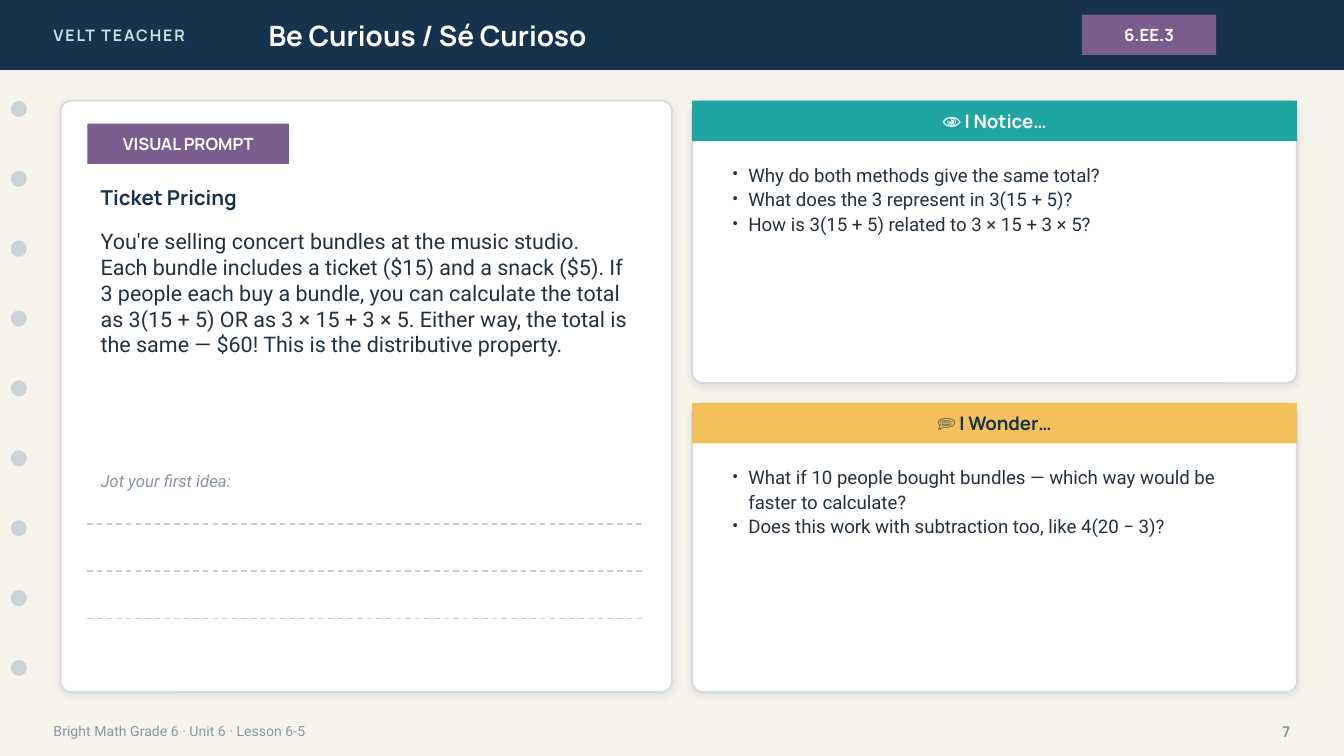
import pptx
import pptx.util
import pptx.dml.color
import pptx.enum.dml
import pptx.enum.shapes
import pptx.enum.text
import pptx.oxml
import pptx.oxml.ns
from lxml import etree

Inches, Pt = pptx.util.Inches, pptx.util.Pt
RGBColor = pptx.dml.color.RGBColor
MSO_SHAPE = pptx.enum.shapes.MSO_SHAPE
PP_ALIGN = pptx.enum.text.PP_ALIGN
MSO_ANCHOR = pptx.enum.text.MSO_ANCHOR
qn = pptx.oxml.ns.qn

CREAM = RGBColor(0xF7, 0xF4, 0xEC)
NAVY = RGBColor(0x17, 0x32, 0x4D)
MINT = RGBColor(0xBF, 0xE6, 0xE2)
WHITE = RGBColor(0xFF, 0xFF, 0xFF)
PURPLE = RGBColor(0x7A, 0x5C, 0x8E)
TEAL = RGBColor(0x1F, 0xA6, 0xA2)
AMBER = RGBColor(0xF2, 0xC1, 0x5B)
INK = RGBColor(0x24, 0x32, 0x3F)
GRAY = RGBColor(0x8A, 0x96, 0xA3)
HOLE = RGBColor(0xCB, 0xD3, 0xD9)
RULE = RGBColor(0xC7, 0xCD, 0xD2)
BORDER = RGBColor(0xD6, 0xDB, 0xDF)

SHADOW = (
    '<a:effectLst xmlns:a="http://schemas.openxmlformats.org/drawingml/2006/main">'
    '<a:outerShdw blurRad="50800" dist="12700" dir="5400000" algn="bl" rotWithShape="0">'
    '<a:srgbClr val="1C2E42"><a:alpha val="10000"/></a:srgbClr>'
    '</a:outerShdw></a:effectLst>'
)

# 16:9 slide
prs = pptx.Presentation()
prs.slide_width = Inches(10)
prs.slide_height = Inches(10 * 9 / 16)
s = prs.slides.add_slide(prs.slide_layouts[6])
s.background.fill.solid()
s.background.fill.fore_color.rgb = CREAM


def add_shape(x, y, w, h, fill, kind=MSO_SHAPE.RECTANGLE, radius=None):
    """Add a filled shape; a radius in inches makes it a shadowed card."""
    sp = s.shapes.add_shape(kind, Inches(x), Inches(y), Inches(w), Inches(h))
    sp.fill.solid()
    sp.fill.fore_color.rgb = fill
    if radius is None:
        sp.shadow.inherit = False
        sp.line.fill.background()
    else:
        sp.adjustments[0] = radius / min(w, h)
        sp.line.color.rgb = BORDER
        sp.line.width = Pt(1)
        sp._element.spPr.append(pptx.oxml.parse_xml(SHADOW))
    return sp


def add_text(text, box=None, sp=None, size=10, font="Manrope", color=INK, bold=False,
             italic=False, align=PP_ALIGN.LEFT, anchor=MSO_ANCHOR.MIDDLE,
             spacing=None, line_spacing=None, bullet=False):
    """Write text, one paragraph per line, into a new box or a given shape."""
    if sp is None:
        sp = s.shapes.add_textbox(*(Inches(v) for v in box))
    tf = sp.text_frame
    tf.word_wrap = True
    tf.vertical_anchor = anchor
    for i, line in enumerate(text.split("\n")):
        p = tf.paragraphs[0] if i == 0 else tf.add_paragraph()
        p.alignment = align
        if line_spacing:
            p.line_spacing = line_spacing
        if bullet:
            pPr = p._p.get_or_add_pPr()
            pPr.set("marL", str(Inches(0.12)))
            pPr.set("indent", str(-Inches(0.12)))
            etree.SubElement(pPr, qn("a:buFont")).set("typeface", font)
            etree.SubElement(pPr, qn("a:buChar")).set("char", "•")
        r = p.add_run()
        r.text = line
        r.font.name, r.font.size = font, Pt(size)
        r.font.bold, r.font.italic = bold, italic
        r.font.color.rgb = color
        if spacing:
            r._r.get_or_add_rPr().set("spc", str(spacing))


# Header bar
add_shape(0, 0, 10, 0.52, NAVY)
add_text("VELT TEACHER", (0.3, 0, 2.4, 0.52), size=8.5, color=MINT, bold=True, spacing=100)
add_text("Be Curious / Sé Curioso", (1.9, 0, 5.6, 0.52), size=15, color=WHITE, bold=True)
add_text("6.EE.3", sp=add_shape(8.05, 0.11, 1, 0.3, PURPLE), size=9, color=WHITE,
         bold=True, align=PP_ALIGN.CENTER)

# Binder holes
for i in range(9):
    add_shape(0.08, 0.75 + 0.52 * i, 0.12, 0.12, HOLE, MSO_SHAPE.OVAL)

# Footer
add_text("Bright Math Grade 6 · Unit 6 · Lesson 6-5", (0.3, 5.3, 7, 0.28),
         size=7.5, font="Roboto", color=GRAY)
add_text("7", (9.2, 5.3, 0.5, 0.28), size=8, color=GRAY, bold=True, align=PP_ALIGN.RIGHT)

# Visual prompt card
add_shape(0.45, 0.75, 4.55, 4.4, WHITE, MSO_SHAPE.ROUNDED_RECTANGLE, radius=0.08)
add_text("VISUAL PROMPT", sp=add_shape(0.65, 0.92, 1.5, 0.3, PURPLE), size=9, color=WHITE,
         bold=True, align=PP_ALIGN.CENTER)
add_text("Ticket Pricing", (0.65, 1.32, 4.15, 0.3), size=11, color=NAVY, bold=True)
add_text("You're selling concert bundles at the music studio. Each bundle includes a ticket "
         "($15) and a snack ($5). If 3 people each buy a bundle, you can calculate the total "
         "as 3(15 + 5) OR as 3 × 15 + 3 × 5. Either way, the total is the same — $60! "
         "This is the distributive property.",
         (0.65, 1.65, 4.15, 1.7), size=11.5, font="Roboto", anchor=MSO_ANCHOR.TOP)
add_text("Jot your first idea:", (0.65, 3.45, 4, 0.25), size=9, font="Roboto",
         color=GRAY, italic=True)

# Writing lines
for i in range(3):
    y = Inches(3.9 + 0.35 * i)
    line = s.shapes.add_connector(pptx.enum.shapes.MSO_CONNECTOR.STRAIGHT,
                                  Inches(0.65), y, Inches(4.8), y)
    line.line.color.rgb = RULE
    line.line.width = Pt(0.75)
    line.line.dash_style = pptx.enum.dml.MSO_LINE.DASH
    etree.SubElement(line._element.spPr, qn("a:effectLst"))

# Notice and wonder cards
cards = [
    (0.75, 2.1, TEAL, WHITE, "👁 I Notice…",
     "Why do both methods give the same total?\n"
     "What does the 3 represent in 3(15 + 5)?\n"
     "How is 3(15 + 5) related to 3 × 15 + 3 × 5?"),
    (3, 2.15, AMBER, NAVY, "💭 I Wonder…",
     "What if 10 people bought bundles — which way would be faster to calculate?\n"
     "Does this work with subtraction too, like 4(20 − 3)?"),
]
for y, h, fill, color, heading, questions in cards:
    add_shape(5.15, y, 4.5, h, WHITE, MSO_SHAPE.ROUNDED_RECTANGLE, radius=0.08)
    add_text(heading, sp=add_shape(5.15, y, 4.5, 0.3, fill), color=color, bold=True,
             align=PP_ALIGN.CENTER)
    add_text(questions, (5.35, y + 0.4, 4.1, h - 0.5), font="Roboto",
             anchor=MSO_ANCHOR.TOP, line_spacing=1.1, bullet=True)

prs.save("out.pptx")
